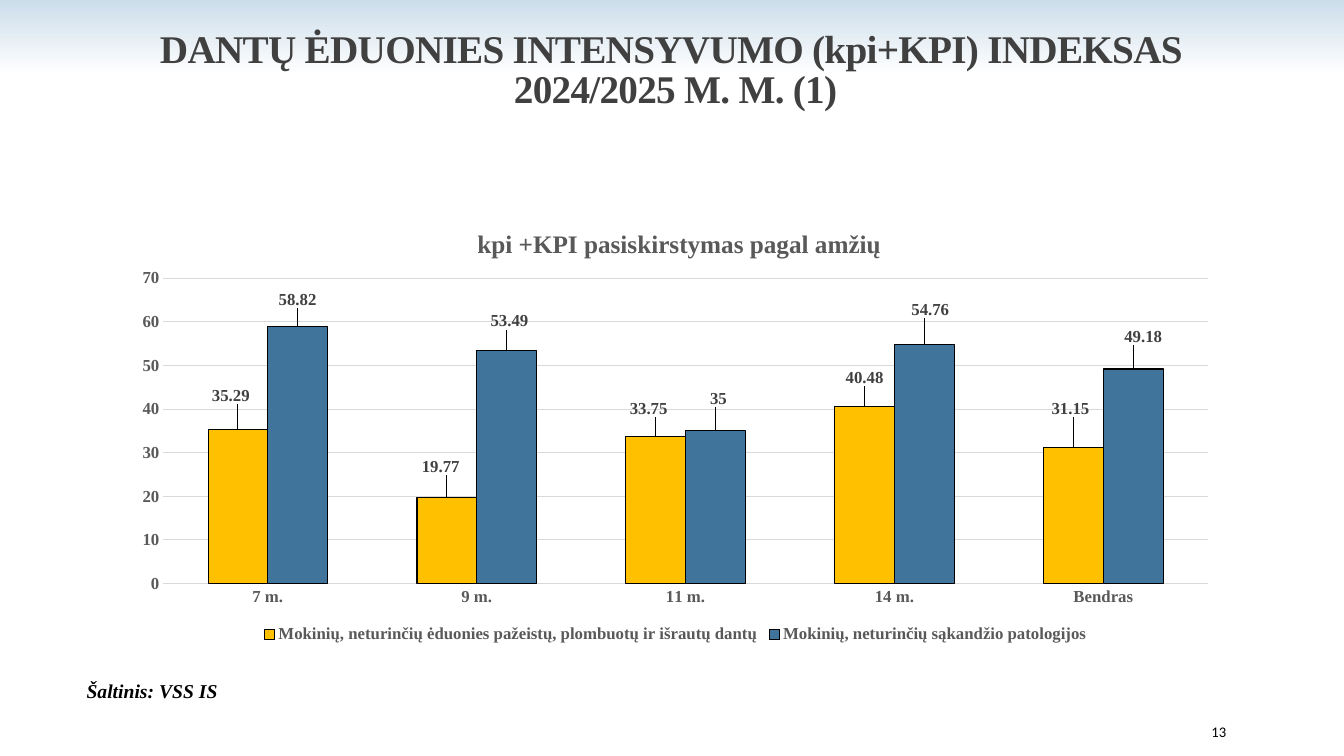
from lxml import etree
from pptx import Presentation
from pptx.chart.data import CategoryChartData
from pptx.dml.color import RGBColor
from pptx.enum.chart import XL_CHART_TYPE as ChartType
from pptx.enum.chart import XL_LABEL_POSITION as LabelPosition
from pptx.enum.chart import XL_LEGEND_POSITION as LegendPosition
from pptx.enum.chart import XL_TICK_MARK as TickMark
from pptx.enum.text import MSO_ANCHOR as Anchor
from pptx.enum.text import PP_ALIGN as Align
from pptx.oxml.ns import qn
from pptx.util import Inches, Pt

COLORS = {
    "sky": "CCDDEA", "white": "FFFFFF", "black": "000000", "dark": "404040",
    "gray": "595959", "grid": "D9D9D9", "gold": "FFC000", "blue": "40749B",
}
SERIF = "Times New Roman"
CHART_WIDTH, CHART_HEIGHT = 11, 4.4
AGES = ["7 m.", "9 m.", "11 m.", "14 m.", "Bendras"]

# Name, colour, values, and label shifts (right, down) in inches
SERIES = [
    ("Mokinių, neturinčių ėduonies pažeistų, plombuotų ir išrautų dantų", "gold",
     [35.29, 19.77, 33.75, 40.48, 31.15],
     [(-0.07, -0.21), (-0.06, -0.18), (-0.07, -0.15), (0, -0.16), (-0.03, -0.26)]),
    ("Mokinių, neturinčių sąkandžio patologijos", "blue",
     [58.82, 53.49, 35, 54.76, 49.18],
     [(0, -0.14), (0.03, -0.16), (0.03, -0.19), (0.06, -0.22), (0.1, -0.19)]),
]


def rgb(name):
    return RGBColor.from_string(COLORS[name])


def style_font(font, size, color, bold=True, italic=False, name=SERIF):
    font.name = name
    font.size = Pt(size)
    font.bold = bold
    font.italic = italic
    font.color.rgb = rgb(color)


def set_background(slide):
    fill = slide.background.fill
    fill.gradient()
    fill.gradient_angle = 270
    for stop, color, position in zip(fill.gradient_stops, ("sky", "white"), (0, 0.1)):
        stop.color.rgb = rgb(color)
        stop.position = position


def add_text(slide, box, text, align=Align.LEFT, anchor=Anchor.TOP, wrap=True, **font):
    shape = slide.shapes.add_textbox(*map(Inches, box))
    frame = shape.text_frame
    frame.text = text
    frame.word_wrap = wrap
    frame.vertical_anchor = anchor
    paragraph = frame.paragraphs[0]
    paragraph.alignment = align
    for run in paragraph.runs:
        style_font(run.font, **font)
    return frame


def add_title(slide, text):
    frame = add_text(slide, (1.2, 0.31, 11, 1.59), text, Align.CENTER, size=28, color="dark")
    frame.margin_top = 0
    paragraph = frame.paragraphs[0]
    paragraph.line_spacing = 0.85
    for run in paragraph.runs:
        run.font._element.set("spc", "-50")


def manual_layout(modes, x, y, width=None, height=None):
    """Build a chart layout from lengths in inches."""
    layout = etree.Element(qn("c:layout"))
    manual = etree.SubElement(layout, qn("c:manualLayout"))
    sizes = {"x": x / CHART_WIDTH, "y": y / CHART_HEIGHT}
    if width:
        sizes.update(w=width / CHART_WIDTH, h=height / CHART_HEIGHT)
    for tag, value in {**modes, **sizes}.items():
        etree.SubElement(manual, qn(f"c:{tag}")).set("val", str(value))
    return layout


def replace_layout(parent, layout, index):
    for old in parent.findall(qn("c:layout")):
        parent.remove(old)
    parent.insert(index, layout)


def style_axis(axis):
    axis.major_tick_mark = axis.minor_tick_mark = TickMark.NONE
    axis.format.line.fill.background()
    style_font(axis.tick_labels.font, 12, "gray")


def style_series(series, color, shifts):
    series.format.fill.solid()
    series.format.fill.fore_color.rgb = rgb(color)
    series.format.line.color.rgb = rgb("black")
    series.format.line.width = Pt(0.75)
    labels = series.data_labels
    labels.show_value = True
    labels.position = LabelPosition.OUTSIDE_END
    style_font(labels.font, 12, "dark")
    for index in range(len(shifts)):
        label = series.points[index].data_label
        style_font(label.font, 12, "dark")
        label.position = LabelPosition.OUTSIDE_END
    for element, shift in zip(labels._element.findall(qn("c:dLbl")), shifts):
        replace_layout(element, manual_layout({}, *shift), 1)


def add_age_chart(slide):
    data = CategoryChartData()
    data.categories = AGES
    for name, _, values, _ in SERIES:
        data.add_series(name, values)
    chart = slide.shapes.add_chart(
        ChartType.COLUMN_CLUSTERED, Inches(1.2), Inches(2.02),
        Inches(CHART_WIDTH), Inches(CHART_HEIGHT), data).chart
    style_font(chart.font, 10, "black", bold=False, name="Calibri")

    # Chart title
    chart.has_title = True
    title = chart.chart_title
    title.text_frame.text = "kpi +KPI pasiskirstymas pagal amžių"
    style_font(title.text_frame.paragraphs[0].runs[0].font, 18, "gray")
    title.include_in_layout = False
    edges = {"xMode": "edge", "yMode": "edge"}
    replace_layout(title._element, manual_layout(edges, 3.49, 0.2), 1)

    # Plot area and axes
    plot_area = chart._chartSpace.chart.plotArea
    inner = {"layoutTarget": "inner", **edges}
    replace_layout(plot_area, manual_layout(inner, 0.42, 0.74, 10.36, 3.03), 0)
    style_axis(chart.category_axis)
    value_axis = chart.value_axis
    style_axis(value_axis)
    value_axis.minimum_scale, value_axis.maximum_scale = 0, 70
    value_axis.major_unit = 10
    value_axis.major_gridlines.format.line.color.rgb = rgb("grid")
    value_axis.major_gridlines.format.line.width = Pt(0.75)

    # Columns
    plot = chart.plots[0]
    plot.gap_width = 150
    plot.overlap = 0
    plot.vary_by_categories = False
    for series, (_, color, _, shifts) in zip(plot.series, SERIES):
        style_series(series, color, shifts)

    # Legend
    chart.has_legend = True
    chart.legend.position = LegendPosition.BOTTOM
    chart.legend.include_in_layout = False
    style_font(chart.legend.font, 12, "gray")


def main():
    presentation = Presentation()
    presentation.slide_width = Inches(13.33)
    presentation.slide_height = Inches(7.5)
    slide = presentation.slides.add_slide(presentation.slide_layouts[6])
    set_background(slide)
    add_title(slide, "DANTŲ ĖDUONIES INTENSYVUMO (kpi+KPI) INDEKSAS \v2024/2025 M. M. (1)")
    add_age_chart(slide)

    # Footer
    add_text(slide, (10.83, 7.06, 1.43, 0.4), "13", Align.RIGHT, Anchor.MIDDLE,
             size=10.5, color="black", bold=False, name="Calibri")
    add_text(slide, (0.76, 6.69, 1.51, 0.34), "Šaltinis: VSS IS", wrap=False,
             size=14, color="black", italic=True)
    presentation.save("out.pptx")


if __name__ == "__main__":
    main()
